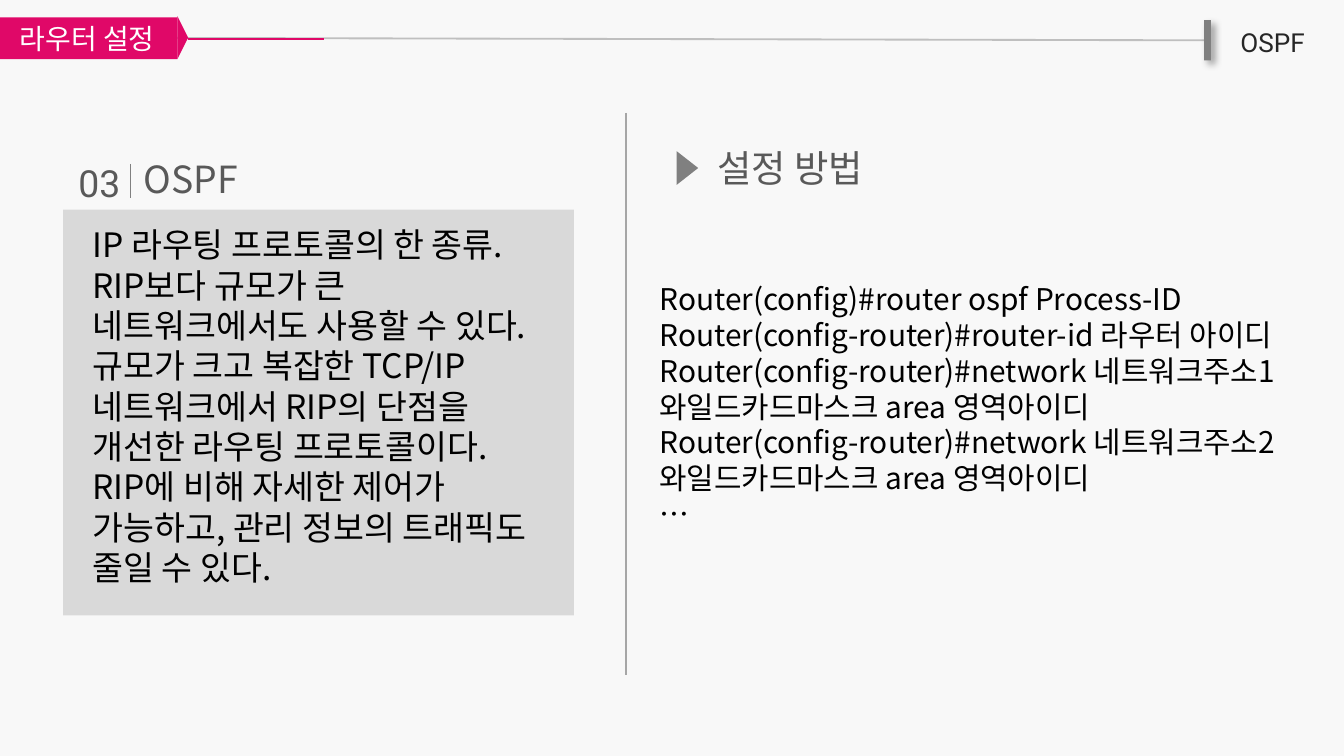
from lxml import etree
from pptx import Presentation
from pptx.dml.color import RGBColor
from pptx.enum.shapes import MSO_CONNECTOR, MSO_SHAPE
from pptx.enum.text import MSO_ANCHOR, PP_ALIGN
from pptx.oxml import parse_xml
from pptx.oxml.ns import nsdecls, qn
from pptx.util import Inches, Pt

BACKGROUND = RGBColor(0xF8, 0xF8, 0xF8)
PINK = RGBColor(0xE0, 0x08, 0x68)
WHITE = RGBColor(0xFF, 0xFF, 0xFF)
BLACK = RGBColor(0x00, 0x00, 0x00)
DARK = RGBColor(0x26, 0x26, 0x26)
HEADING = RGBColor(0x59, 0x59, 0x59)
GRAY = RGBColor(0x80, 0x80, 0x80)
DIVIDER = RGBColor(0xA6, 0xA6, 0xA6)
RULE = RGBColor(0xBF, 0xBF, 0xBF)
PANEL = RGBColor(0xD9, 0xD9, 0xD9)
KOREAN = "Noto Sans CJK KR"
LATIN = "Roboto"
LINE_HEIGHT = 1.2

presentation = Presentation()
presentation.slide_width = Inches(10)
presentation.slide_height = Inches(10 * 9 / 16)
slide = presentation.slides.add_slide(presentation.slide_layouts[6])
slide.background.fill.solid()
slide.background.fill.fore_color.rgb = BACKGROUND


def add_block(kind, box, color, rotation=0):
    shape = slide.shapes.add_shape(kind, *map(Inches, box))
    shape.shadow.inherit = False
    shape.fill.solid()
    shape.fill.fore_color.rgb = color
    shape.line.fill.background()
    shape.rotation = rotation
    return shape


def write(shape, lines, size, font, color, align):
    """Fill a shape with one paragraph per line, for Latin and Korean script alike."""
    frame = shape.text_frame
    frame.word_wrap = True
    for index, line in enumerate(lines):
        paragraph = frame.add_paragraph() if index else frame.paragraphs[0]
        paragraph.alignment = align
        paragraph.line_spacing = Pt(size * LINE_HEIGHT)
        run = paragraph.add_run()
        run.text = line
        run.font.size = Pt(size)
        run.font.name = font
        run.font.color.rgb = color
        east_asian = etree.SubElement(run.font._element, qn("a:ea"))
        east_asian.set("typeface", font)


# Lines: header rule, its pink start, number separator, column divider
for start, end, color, width in [
    ((0.35, 0.28), (8.96, 0.3), RULE, 1),
    ((1.4, 0.29), (2.41, 0.29), PINK, 1),
    ((0.97, 1.22), (0.97, 1.47), GRAY, 0.75),
    ((4.66, 0.84), (4.66, 5.02), DIVIDER, 1),
]:
    connector = slide.shapes.add_connector(
        MSO_CONNECTOR.STRAIGHT, *map(Inches, start + end))
    connector.line.color.rgb = color
    connector.line.width = Pt(width)
    etree.SubElement(connector._element.spPr, qn("a:effectLst"))

# Header bar with a soft shadow
header_bar = add_block(MSO_SHAPE.RECTANGLE, (8.96, 0.15, 0.05, 0.3), GRAY)
effects = header_bar._element.spPr.find(qn("a:effectLst"))
effects.append(parse_xml(
    f'<a:outerShdw {nsdecls("a")} blurRad="{Pt(4)}" dist="{Pt(3)}" dir="2700000" '
    'algn="tl" rotWithShape="0"><a:srgbClr val="000000"><a:alpha val="40000"/>'
    '</a:srgbClr></a:outerShdw>'))

# Section tag
tag = add_block(MSO_SHAPE.RECTANGLE, (-0.02, 0.13, 1.34, 0.31), PINK)
tag.text_frame.vertical_anchor = MSO_ANCHOR.MIDDLE
write(tag, ["라우터 설정"], 15, KOREAN, WHITE, PP_ALIGN.CENTER)
add_block(MSO_SHAPE.ISOSCELES_TRIANGLE, (1.2, 0.24, 0.32, 0.08), PINK, 90)

# Description panel and the marker of the right heading
add_block(MSO_SHAPE.RECTANGLE, (0.47, 1.56, 3.8, 3.02), PANEL)
add_block(MSO_SHAPE.ISOSCELES_TRIANGLE, (4.99, 1.17, 0.25, 0.16), GRAY, 90)

description = [
    "IP 라우팅 프로토콜의 한 종류.",
    "RIP보다 규모가 큰 네트워크에서도 사용할 수 있다.",
    "규모가 크고 복잡한 TCP/IP 네트워크에서 RIP의 단점을 개선한 라우팅 프로토콜이다.",
    "RIP에 비해 자세한 제어가 가능하고, 관리 정보의 트래픽도 줄일 수 있다.",
]
commands = [
    "Router(config)#router ospf Process-ID",
    "Router(config-router)#router-id 라우터 아이디",
    "Router(config-router)#network 네트워크주소1 와일드카드마스크 area 영역아이디",
    "Router(config-router)#network 네트워크주소2 와일드카드마스크 area 영역아이디",
    "…",
]
for box, lines, size, font, color, align in [
    ((8.98, 0.15, 0.98, 0.34), ["OSPF"], 14, LATIN, DARK, PP_ALIGN.CENTER),
    ((0.88, 1.11, 1.08, 0.44), ["OSPF"], 20, KOREAN, HEADING, PP_ALIGN.CENTER),
    ((0.45, 1.14, 0.58, 0.44), ["03"], 20, LATIN, HEADING, PP_ALIGN.CENTER),
    ((0.59, 1.62, 3.63, 2.83), description, 18, KOREAN, BLACK, PP_ALIGN.LEFT),
    ((5.17, 1.03, 1.42, 0.44), ["설정 방법"], 20, KOREAN, HEADING, PP_ALIGN.CENTER),
    ((4.81, 2.04, 4.9, 1.99), commands, 16, KOREAN, BLACK, PP_ALIGN.LEFT),
]:
    text_box = slide.shapes.add_textbox(*map(Inches, box))
    write(text_box, lines, size, font, color, align)

presentation.save("out.pptx")
